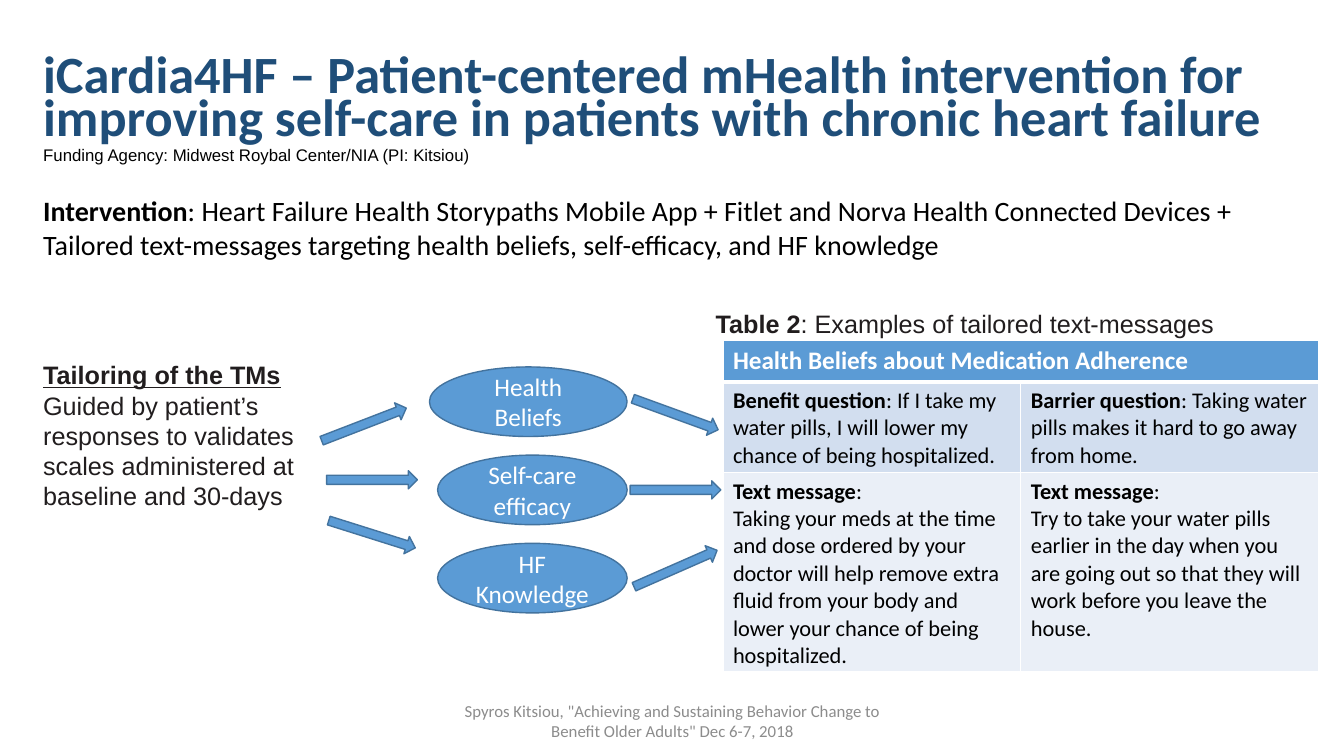
from lxml import etree
from pptx import Presentation
from pptx.dml.color import RGBColor
from pptx.enum.shapes import MSO_SHAPE
from pptx.enum.text import MSO_ANCHOR, PP_ALIGN
from pptx.oxml.ns import qn
from pptx.util import Inches, Pt

ELLIPSE, ARROW = MSO_SHAPE.OVAL, MSO_SHAPE.RIGHT_ARROW
LEFT, CENTER = PP_ALIGN.LEFT, PP_ALIGN.CENTER
TOP, MIDDLE = MSO_ANCHOR.TOP, MSO_ANCHOR.MIDDLE

THEME = {
    "heading_font": "Calibri", "plain_font": "Arial",
    "title": "1F4E79", "black": "000000", "ink": "211D1E", "white": "FFFFFF",
    "gray": "8C8C8C", "blue": "5B9BD5", "outline": "43739E",
    "question_row": "D2DEEF", "message_row": "EAEFF7",
    "title_size": 37.4, "lead_size": 20, "body_size": 18,
    "cell_size": 16, "small_size": 12,
}

TITLE = ("iCardia4HF – Patient-centered mHealth intervention for "
         "improving self-care in patients with chronic heart failure")
FUNDING = "Funding Agency: Midwest Roybal Center/NIA (PI: Kitsiou)"
INTERVENTION = [[
    ("Intervention", "b"),
    (": Heart Failure Health Storypaths Mobile App + Fitlet and Norva Health Connected Devices + "
     "Tailored text-messages targeting health beliefs, self-efficacy, and HF knowledge", ""),
]]
TAILORING = [
    [("Tailoring of the TMs", "bu")],
    [("Guided by patient’s responses to validates scales administered at baseline and 30-days", "")],
]
CAPTION = [[("Table 2", "b"), (": Examples of tailored text-messages", "")]]
FOOTER = 'Spyros Kitsiou, "Achieving and Sustaining Behavior Change to Benefit Older Adults" Dec 6-7, 2018'

BELIEFS = [("Health Beliefs", 4.26), ("Self-care efficacy", 4.34), ("HF Knowledge", 4.34)]
BELIEF_TOP, BELIEF_STEP, BELIEF_RIGHT, BELIEF_HEIGHT = 3.64, 0.875, 6.22, 0.69

ARROWS = [
    (3.16, 4.12, -21.1), (3.24, 4.67, 0), (3.24, 5.21, 17.5),
    (6.25, 4.02, 20), (6.25, 4.77, 0), (6.25, 5.55, -23.7),
]
ARROW_SIZE = (0.9, 0.18)

TABLE_HEADER = "Health Beliefs about Medication Adherence"
QUESTIONS = [
    ("Benefit question", "If I take my water pills, I will lower my chance of being hospitalized."),
    ("Barrier question", "Taking water pills makes it hard to go away from home."),
]
MESSAGES = [
    "Taking your meds at the time and dose ordered by your doctor will help remove extra fluid "
    "from your body and lower your chance of being hospitalized.",
    "Try to take your water pills earlier in the day when you are going out so that they will "
    "work before you leave the house.",
]
TABLE_BOX = (7.17, 3.38, 5.91, 3.27)
ROW_HEIGHTS = (0.41, 0.89, 1.97)


def color(name):
    return RGBColor.from_string(THEME[name])


def write(frame, content, *, size, ink="black", font="heading_font",
          align=LEFT, anchor=TOP, bold=False, spacing=None, wrap=True):
    paragraphs = [[(content, "b" if bold else "")]] if isinstance(content, str) else content
    frame.word_wrap = wrap
    frame.vertical_anchor = anchor
    for index, runs in enumerate(paragraphs):
        paragraph = frame.add_paragraph() if index else frame.paragraphs[0]
        paragraph.alignment = align
        if spacing:
            paragraph.line_spacing = spacing
        for text, style in runs:
            run = paragraph.add_run()
            run.text = text
            run.font.name = THEME[font]
            run.font.size = Pt(THEME[size])
            run.font.color.rgb = color(ink)
            run.font.bold = "b" in style
            run.font.underline = "u" in style


def add_text(slide, box, content, **style):
    shape = slide.shapes.add_textbox(*map(Inches, box))
    write(shape.text_frame, content, **style)


def add_blue_shape(slide, kind, box, rotation=0):
    shape = slide.shapes.add_shape(kind, *map(Inches, box))
    shape.shadow.inherit = False
    shape.fill.solid()
    shape.fill.fore_color.rgb = color("blue")
    shape.line.color.rgb = color("outline")
    shape.line.width = Pt(1)
    shape.rotation = rotation
    return shape


def style_cell(cell, fill, bottom=1, top=1):
    properties = cell._tc.get_or_add_tcPr()
    for side, width in (("L", 1), ("R", 1), ("T", top), ("B", bottom)):
        line = etree.SubElement(properties, qn(f"a:ln{side}"), w=str(Pt(width)))
        solid = etree.SubElement(line, qn("a:solidFill"))
        etree.SubElement(solid, qn("a:srgbClr"), val=THEME["white"])
    cell.fill.solid()
    cell.fill.fore_color.rgb = color(fill)


def add_message_table(slide):
    table = slide.shapes.add_table(3, 2, *map(Inches, TABLE_BOX)).table
    for row, height in zip(table.rows, ROW_HEIGHTS):
        row.height = Inches(height)
    table.cell(0, 0).merge(table.cell(0, 1))
    write(table.cell(0, 0).text_frame, TABLE_HEADER, size="body_size", ink="white", bold=True)
    for column, ((label, question), message) in enumerate(zip(QUESTIONS, MESSAGES)):
        style_cell(table.cell(0, column), "blue", bottom=3)
        style_cell(table.cell(1, column), "question_row", top=3)
        style_cell(table.cell(2, column), "message_row")
        write(table.cell(1, column).text_frame,
              [[(label, "b"), (f": {question}", "")]], size="cell_size")
        write(table.cell(2, column).text_frame,
              [[("Text message", "b"), (":", "")], [(message, "")]], size="cell_size")


def main():
    presentation = Presentation()
    presentation.slide_width, presentation.slide_height = Inches(13.33), Inches(7.5)
    slide = presentation.slides.add_slide(presentation.slide_layouts[6])

    add_text(slide, (0.33, 1.87, 12.75, 0.77), INTERVENTION, size="lead_size")
    add_text(slide, (0.33, 1.39, 8.55, 0.3), FUNDING, size="small_size", font="plain_font")
    add_text(slide, (0.33, 0.52, 12.6, 0.98), TITLE, size="title_size", ink="title",
             bold=True, anchor=MIDDLE, spacing=0.7)

    for index, (belief, left) in enumerate(BELIEFS):
        top = BELIEF_TOP + index * BELIEF_STEP
        ellipse = add_blue_shape(slide, ELLIPSE, (left, top, BELIEF_RIGHT - left, BELIEF_HEIGHT))
        write(ellipse.text_frame, belief, size="body_size", ink="white",
              align=CENTER, anchor=MIDDLE)

    add_text(slide, (0.33, 3.52, 3.46, 1.62), TAILORING, size="body_size",
             ink="ink", font="plain_font")
    add_message_table(slide)
    add_text(slide, (7, 3.01, 5.19, 0.4), CAPTION, size="body_size", ink="ink",
             font="plain_font", wrap=False)

    for left, top, rotation in ARROWS:
        add_blue_shape(slide, ARROW, (left, top, *ARROW_SIZE), rotation)

    add_text(slide, (4.42, 6.95, 4.5, 0.4), FOOTER, size="small_size", ink="gray",
             align=CENTER, anchor=MIDDLE)
    presentation.save("out.pptx")


if __name__ == "__main__":
    main()
